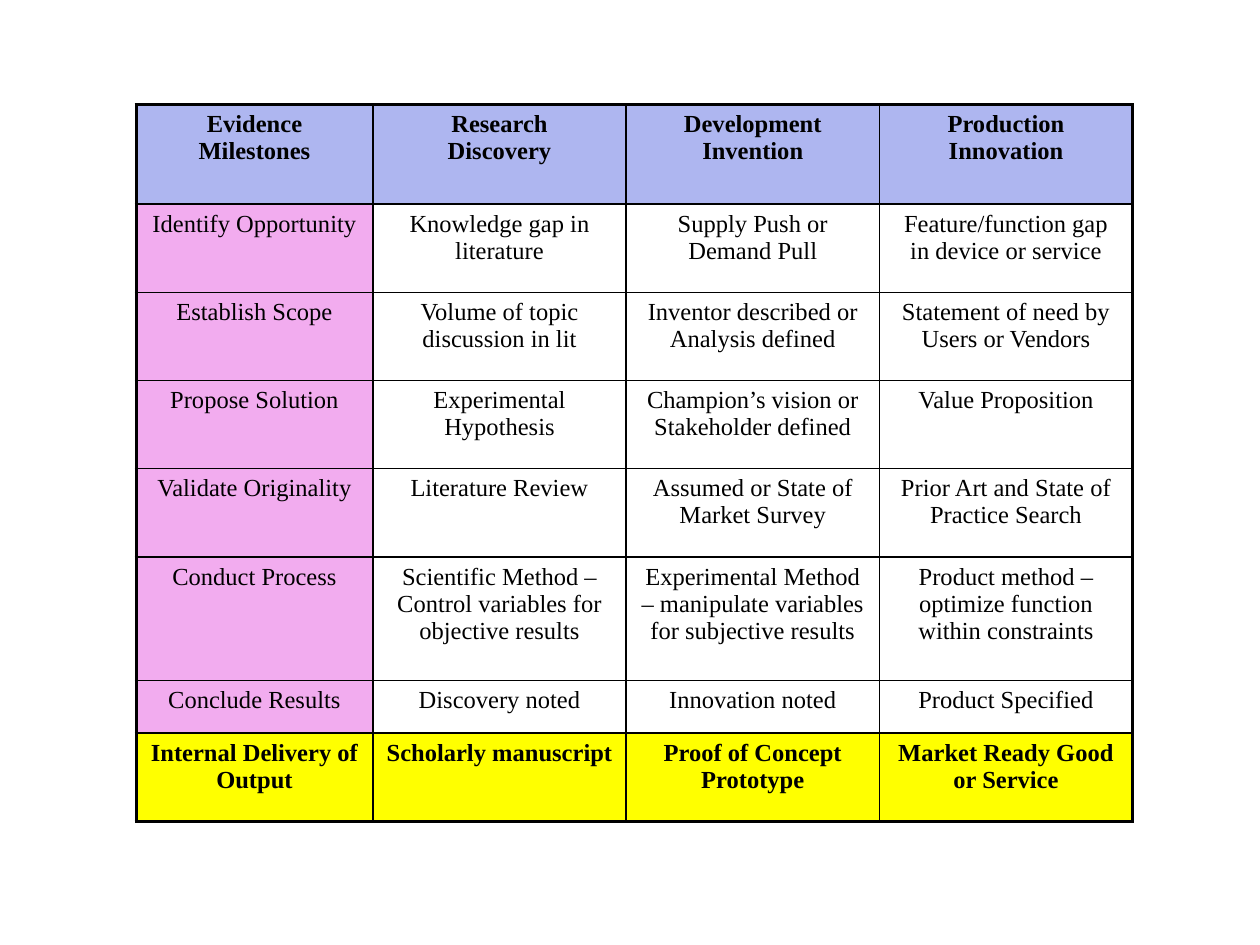
"""Build a slide with a table of evidence milestones for three kinds of work."""
from lxml.etree import SubElement
from pptx import Presentation
from pptx.dml.color import RGBColor as RGB
from pptx.enum.text import PP_ALIGN as Align
from pptx.oxml.ns import qn
from pptx.util import Inches, Pt

ROWS = [
    ("Evidence\nMilestones", "Research\nDiscovery", "Development Invention", "Production Innovation"),
    ("Identify Opportunity", "Knowledge gap in literature", "Supply Push or Demand Pull",
     "Feature/function gap in device or service"),
    ("Establish Scope", "Volume of topic discussion in lit", "Inventor described or Analysis defined",
     "Statement of need by Users or Vendors"),
    ("Propose Solution", "Experimental Hypothesis", "Champion’s vision or Stakeholder defined",
     "Value Proposition"),
    ("Validate Originality", "Literature Review", "Assumed or State of Market Survey",
     "Prior Art and State of Practice Search"),
    ("Conduct Process", "Scientific Method – Control variables for objective results",
     "Experimental Method – manipulate variables for subjective results",
     "Product method – optimize function within constraints"),
    ("Conclude Results", "Discovery noted", "Innovation noted", "Product Specified"),
    ("Internal Delivery of Output", "Scholarly manuscript", "Proof of Concept Prototype",
     "Market Ready Good or Service"),
]
COLUMN_WIDTHS = [1.88, 2.01, 2.01, 2.01]
ROW_HEIGHTS = [0.79, 0.7, 0.7, 0.7, 0.7, 0.98, 0.42, 0.7]
LEFT, TOP = 1.08, 0.83
THEME = {
    "font": "Times New Roman", "size": 14, "ink": "000000",
    "header": "AEB6F0", "milestone": "F2ACEF", "output": "FFFF00",
    "outer": 2, "inner": 1,
}


def fill_name(row, column):
    """Return the theme colour name of a cell, or None for a plain cell."""
    if row == 0:
        return "header"
    if row == len(ROWS) - 1:
        return "output"
    return "milestone" if column == 0 else None


def set_borders(cell, row, column):
    """Draw thick lines on the outside of the table and thin lines inside."""
    outside = {"lnL": column == 0, "lnR": column == len(COLUMN_WIDTHS) - 1,
               "lnT": row == 0, "lnB": row == len(ROWS) - 1}
    properties = cell._tc.get_or_add_tcPr()
    for position, (side, is_outer) in enumerate(outside.items()):
        width = THEME["outer" if is_outer else "inner"]
        line = SubElement(properties, qn(f"a:{side}"), w=str(Pt(width)))
        solid = SubElement(line, qn("a:solidFill"))
        SubElement(solid, qn("a:srgbClr"), val=THEME["ink"])
        properties.insert(position, line)


def format_cell(cell, text, row, column):
    """Write the text of one cell and give it its fill, type and borders."""
    name = fill_name(row, column)
    if name:
        cell.fill.solid()
        cell.fill.fore_color.rgb = RGB.from_string(THEME[name])
    else:
        cell.fill.background()
    cell.text_frame.text = text
    for para in cell.text_frame.paragraphs:
        para.alignment = Align.CENTER
        for span in para.runs:
            span.font.name = THEME["font"]
            span.font.size = Pt(THEME["size"])
            span.font.bold = name in ("header", "output")
            span.font.color.rgb = RGB.from_string(THEME["ink"])
    set_borders(cell, row, column)


def main():
    """Create the deck and save it."""
    deck = Presentation()
    deck.slide_width, deck.slide_height = Inches(10), Inches(7.5)
    page = deck.slides.add_slide(deck.slide_layouts[6])
    table = page.shapes.add_table(
        len(ROWS), len(COLUMN_WIDTHS), Inches(LEFT), Inches(TOP),
        Inches(sum(COLUMN_WIDTHS)), Inches(sum(ROW_HEIGHTS))).table
    table.first_row = table.horz_banding = False
    for column, width in zip(table.columns, COLUMN_WIDTHS):
        column.width = Inches(width)
    for row, height in zip(table.rows, ROW_HEIGHTS):
        row.height = Inches(height)
    for row, texts in enumerate(ROWS):
        for column, text in enumerate(texts):
            format_cell(table.cell(row, column), text, row, column)
    deck.save("out.pptx")


if __name__ == "__main__":
    main()
